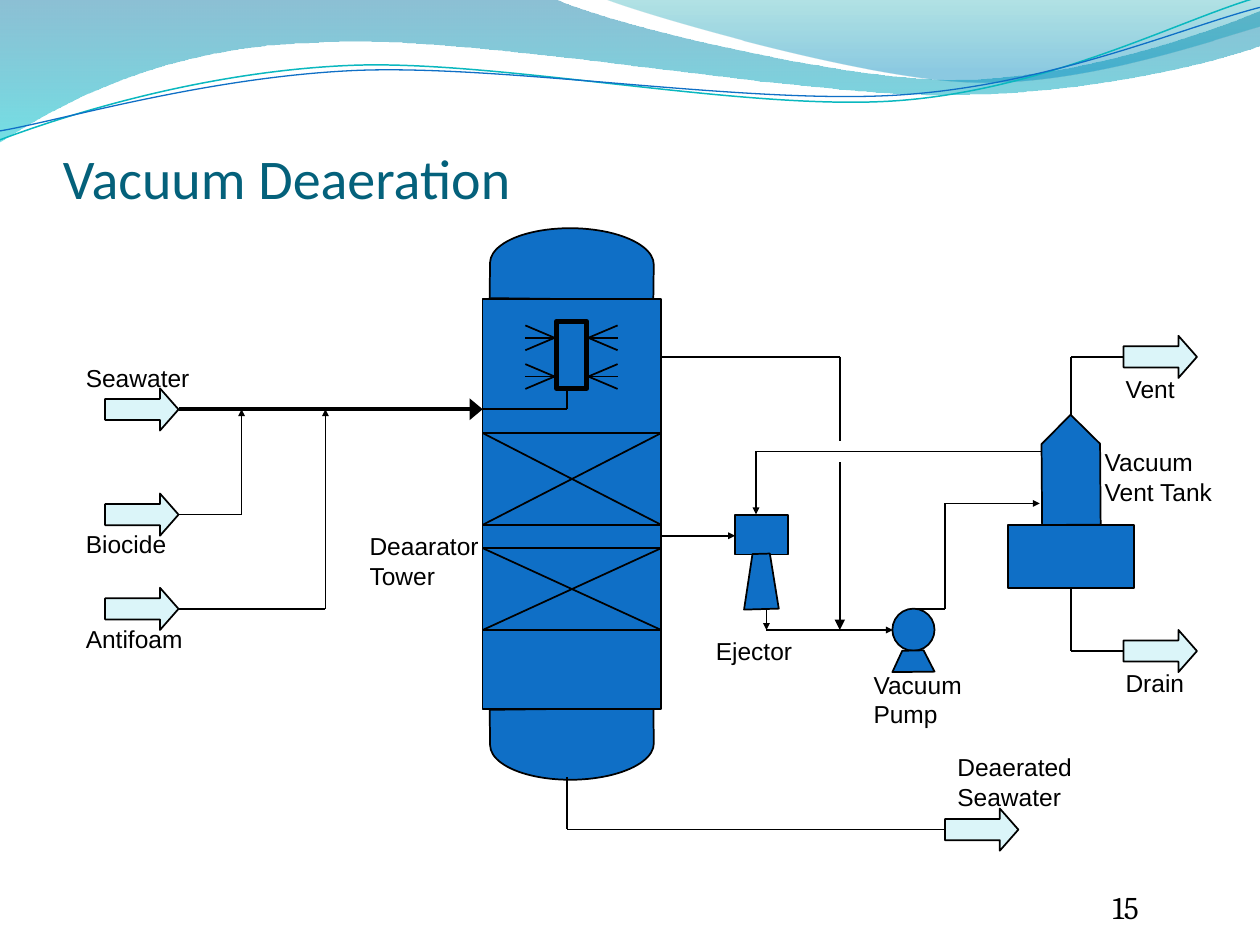
from dataclasses import dataclass
from itertools import pairwise, product

from pptx import Presentation
from pptx.dml.color import RGBColor
from pptx.enum.shapes import MSO_CONNECTOR, MSO_SHAPE
from pptx.enum.text import MSO_ANCHOR
from pptx.oxml.ns import qn
from pptx.slide import Slide
from pptx.util import Cm, Pt
from lxml.etree import SubElement

BLUE, PALE, BLACK, TEAL = "0F6FC6", "DBF5F9", "000000", "04617B"
ARROW_WIDTH, ARROW_HEIGHT = 1.48, 0.85
ARROW_MIDDLE = 0.42
SMALL, MEDIUM, WIDE = ("sm", "sm"), ("med", "med"), ("lg", "med")


def color(value):
    """Turn a hex string into a colour."""
    return RGBColor.from_string(value)


def paint(shape, fill, line=BLACK, weight=1):
    """Set the fill and the outline of a shape; None leaves either out."""
    shape.shadow.inherit = False
    if fill:
        shape.fill.solid()
        shape.fill.fore_color.rgb = color(fill)
    else:
        shape.fill.background()
    if line:
        shape.line.color.rgb = color(line)
        shape.line.width = Pt(weight)
    else:
        shape.line.fill.background()


def paint_gradient(shape, stops):
    """Fill a shape from top to bottom with translucent colours."""
    paint(shape, None, None)
    shape.fill.gradient()
    shape.fill.gradient_angle = 270
    for stop, (position, value, _) in zip(shape.fill.gradient_stops, stops):
        stop.position = position
        stop.color.rgb = color(value)
    elements = shape._element.spPr.iter(qn("a:srgbClr"))
    for element, (_, _, opacity) in zip(elements, stops):
        SubElement(element, qn("a:alpha"), val=str(opacity * 1000))


def bend(shape, parts):
    """Join three line segments into one cubic curve for each part of six numbers."""
    path = next(shape._element.iter(qn("a:path")))
    segments = iter(path.findall(qn("a:lnTo")))
    for part in parts:
        group = [next(segments) for _ in range(len(part) // 2)]
        if len(group) == 3:
            curve = SubElement(path, qn("a:cubicBezTo"))
            group[0].addprevious(curve)
            for segment in group:
                curve.append(segment[0])
                path.remove(segment)


@dataclass
class Region:
    """A part of the slide that places things from its top left corner, in cm."""
    slide: Slide
    left: float
    top: float

    def at(self, x, y):
        """Return the slide position of a point in the region."""
        return Cm(self.left + x), Cm(self.top + y)

    def shape(self, kind, x, y, width, height, fill=BLUE, weight=1):
        """Add a preset shape."""
        shape = self.slide.shapes.add_shape(kind, *self.at(x, y), Cm(width), Cm(height))
        paint(shape, fill, BLACK, weight)
        return shape

    def turned(self, kind, center_x, center_y, length, breadth, rotation):
        """Add a preset shape turned about its centre."""
        shape = self.shape(kind, center_x - length / 2, center_y - breadth / 2, length, breadth)
        shape.rotation = rotation

    def outline(self, path, close=True):
        """Add a freeform along points and cubic curves (six numbers)."""
        points = [self.at(*part[i:i + 2]) for part in path for i in range(0, len(part), 2)]
        builder = self.slide.shapes.build_freeform(*points[0])
        builder.add_line_segments(points[1:], close=close)
        shape = builder.convert_to_shape()
        bend(shape, path[1:])
        return shape

    def pipe(self, *points, head=None, weight=1):
        """Join points with lines; head gives the arrowhead's width and length."""
        for start, end in pairwise(points):
            line = self.slide.shapes.add_connector(
                MSO_CONNECTOR.STRAIGHT, *self.at(*start), *self.at(*end))
            line.line.color.rgb = color(BLACK)
            line.line.width = Pt(weight)
            if head and end == points[-1]:
                SubElement(line.line._get_or_add_ln(), qn("a:tailEnd"),
                           type="triangle", w=head[0], len=head[1])
            SubElement(line._element.spPr, qn("a:effectLst"))

    def stream(self, x, y):
        """Add the block arrow of an inlet or outlet."""
        arrow = self.shape(MSO_SHAPE.RIGHT_ARROW, x, y, ARROW_WIDTH, ARROW_HEIGHT, PALE)
        arrow.adjustments[1] = 0.44

    def text(self, content, x, y, width, height, size=14, font="Arial", value=BLACK):
        """Add a wrapping text box and return its frame."""
        frame = self.slide.shapes.add_textbox(
            *self.at(x, y), Cm(width), Cm(height)).text_frame
        frame.word_wrap = True
        run = frame.paragraphs[0].add_run()
        run.text = content
        run.font.size, run.font.name = Pt(size), font
        run.font.color.rgb = color(value)
        return frame

    def heading(self, *arguments):
        """Add text without margins that stands on the bottom of its box."""
        frame = self.text(*arguments)
        frame.margin_left = frame.margin_right = frame.margin_bottom = 0
        frame.vertical_anchor = MSO_ANCHOR.BOTTOM


def add_waves(region):
    """Draw the waves along the top."""
    band = region.outline([
        (0, 0), (11.18, -0.02), (12.09, 0.43, 16.87, 1.6, 19.25, 1.6),
        (21.67, 1.6, 24.33, 0.66, 25.4, 0.23), (25.43, 0.91),
        (24.97, 1.12, 22.1, 1.93, 18.95, 1.91), (15.8, 1.91, 9.7, 0.71, 6.53, 0.86),
        (3.28, 0.91, 1.17, 2.11, -0.03, 2.87)])
    paint_gradient(band, [(0, "0074A1", 45), (1, "00C6CF", 55)])
    crest = region.outline([
        (12.17, -0.03), (12.93, 0.28, 17.32, 1.57, 19.53, 1.65),
        (21.74, 1.75, 24.41, 0.81, 25.4, 0.53), (25.4, 0)])
    paint_gradient(crest, [(0, "00A1A9", 30), (0.8, "008BBF", 45)])
    ripples = [
        ("0AB8BF", 0.85, [(0, 2.82), (1.22, 2.36, 4.01, 1.45, 7.04, 1.32),
                          (10.03, 1.19, 15.06, 2.26, 18.11, 2.03),
                          (21.16, 1.8, 23.83, 0.38, 25.35, -0.05)]),
        (BLUE, 0.75, [(0, 2.64), (1.19, 2.44, 4.17, 1.55, 7.19, 1.42),
                      (10.24, 1.3, 15.16, 2.13, 18.21, 1.91),
                      (21.23, 1.7, 23.9, 0.53, 25.4, 0.15)])]
    for value, weight, path in ripples:
        paint(region.outline(path, close=False), None, value, weight)


def add_tower(region):
    """Draw the tower with its packed beds and spray distributor."""
    width, dome, body = 3.6, 1.43, 8.26
    for center, rotation in ((dome / 2, 270.7), (dome * 1.5 + body, 89.3)):
        region.turned(MSO_SHAPE.FLOWCHART_DELAY, width / 2, center, dome, 3.3, rotation)
    region.shape(MSO_SHAPE.RECTANGLE, 0, dome, width, body)
    for top, height in ((4.13, 1.85), (6.45, 1.65)):
        region.shape(MSO_SHAPE.RECTANGLE, 0, top, width, height)
        region.pipe((width, top), (0, top + height))
        region.pipe((0, top), (width, top + height))
    region.shape(MSO_SHAPE.RECTANGLE, 1.49, 1.88, 0.61, 1.35, weight=3)
    for (tip, end), y, rise in product(
            ((2.13, 2.72), (1.45, 0.86)), (2.21, 2.99), (-0.25, 0, 0.25)):
        region.pipe((tip, y), (end, y + rise))
    region.pipe((0, 3.65), (1.7, 3.65), (1.7, 3.22))
    region.text("Deaarator Tower", -2.53, 5.99, 4.01, 1.45)


def add_feeds(region):
    """Draw the seawater line and the two chemicals dosed into it."""
    region.pipe((ARROW_WIDTH, ARROW_MIDDLE), (7.61, ARROW_MIDDLE), head=WIDE, weight=2.5)
    feeds = [("Seawater", 0, -0.64, None), ("Biocide", 2.12, 0.59, 2.75),
             ("Antifoam", 4.02, 0.6, 4.44)]
    for name, top, label_offset, junction in feeds:
        region.stream(0, top)
        region.text(name, -0.64, top + label_offset, 4.01, 0.85)
        if junction:
            level = top + ARROW_MIDDLE
            region.pipe((ARROW_WIDTH, level), (junction, level),
                        (junction, ARROW_MIDDLE), head=SMALL)


def add_ejector(region):
    """Draw the ejector and the gas lines around it."""
    region.shape(MSO_SHAPE.RECTANGLE, 1.48, 3.2, 1.06, 0.79)
    paint(region.outline([(2.36, 5.08), (2.18, 3.97), (1.83, 3.98), (1.66, 5.1)]), BLUE)
    region.pipe((0, 3.61), (1.48, 3.61), head=SMALL)
    region.pipe((2.11, 5.08), (2.11, 5.51), head=SMALL)
    region.pipe((2.11, 5.51), (4.66, 5.51), head=SMALL)
    region.pipe((7.83, 1.91), (1.9, 1.91), (1.9, 3.18), head=SMALL)
    region.pipe((0, 0), (3.59, 0), (3.59, 1.7))
    region.pipe((3.59, 2.13), (3.59, 5.51), head=MEDIUM)
    region.text("Ejector", 0.84, 5.51, 4.01, 0.85)


def add_pump(region):
    """Draw the vacuum pump and its discharge line."""
    region.pipe((0.42, 0), (1.06, 0), (1.06, -2.12), (2.97, -2.12), head=SMALL)
    region.shape(MSO_SHAPE.OVAL, 0, 0, 0.85, 0.85)
    paint(region.outline([(0.85, 1.27), (0.63, 0.84), (0.2, 0.85), (0, 1.28)]), BLUE)
    region.text("Vacuum Pump", -0.63, 1.11, 3.38, 1.45)


def add_vent_tank(region):
    """Draw the vent tank with its vent and drain."""
    region.turned(MSO_SHAPE.PENTAGON, 1.27, 2.7, 2.22, 1.18, 269.6)
    region.shape(MSO_SHAPE.RECTANGLE, 0, 3.81, 2.54, 1.27)
    for name, top, start in (("Vent", 0, 1.6), ("Drain", 5.93, 5.08)):
        level = top + ARROW_MIDDLE
        region.pipe((1.27, start), (1.27, level), (2.33, level))
        region.stream(2.33, top)
        region.text(name, 2.12, top + 0.64, 1.9, 0.85)
    region.text("Vacuum Vent Tank", 1.7, 2.12, 3.38, 1.45)


def add_outlet(region):
    """Draw the line that takes the deaerated seawater away."""
    region.pipe((0, 0), (0, 1.05), (7.62, 1.05))
    region.stream(7.62, 1.05 - ARROW_MIDDLE)
    region.text("Deaerated Seawater", 7.62, -0.63, 4.01, 1.45)


def main():
    """Build the slide and save it."""
    presentation = Presentation()
    presentation.slide_width, presentation.slide_height = Cm(25.4), Cm(19.05)
    slide = presentation.slides.add_slide(presentation.slide_layouts[6])
    page = Region(slide, 0, 0)
    add_waves(page)
    page.heading("Vacuum Deaeration", 1.27, 1.06, 22.86, 3.18, 32, "Calibri", TEAL)
    page.heading("15", 22.43, 17.65, 1.7, 1.02, 18, "Cambria")
    add_tower(Region(slide, 9.73, 4.6))
    add_feeds(Region(slide, 2.12, 7.83))
    add_ejector(Region(slide, 13.34, 7.19))
    add_pump(Region(slide, 17.99, 12.27))
    add_vent_tank(Region(slide, 20.32, 6.77))
    add_outlet(Region(slide, 11.43, 15.67))
    presentation.save("out.pptx")


if __name__ == "__main__":
    main()
